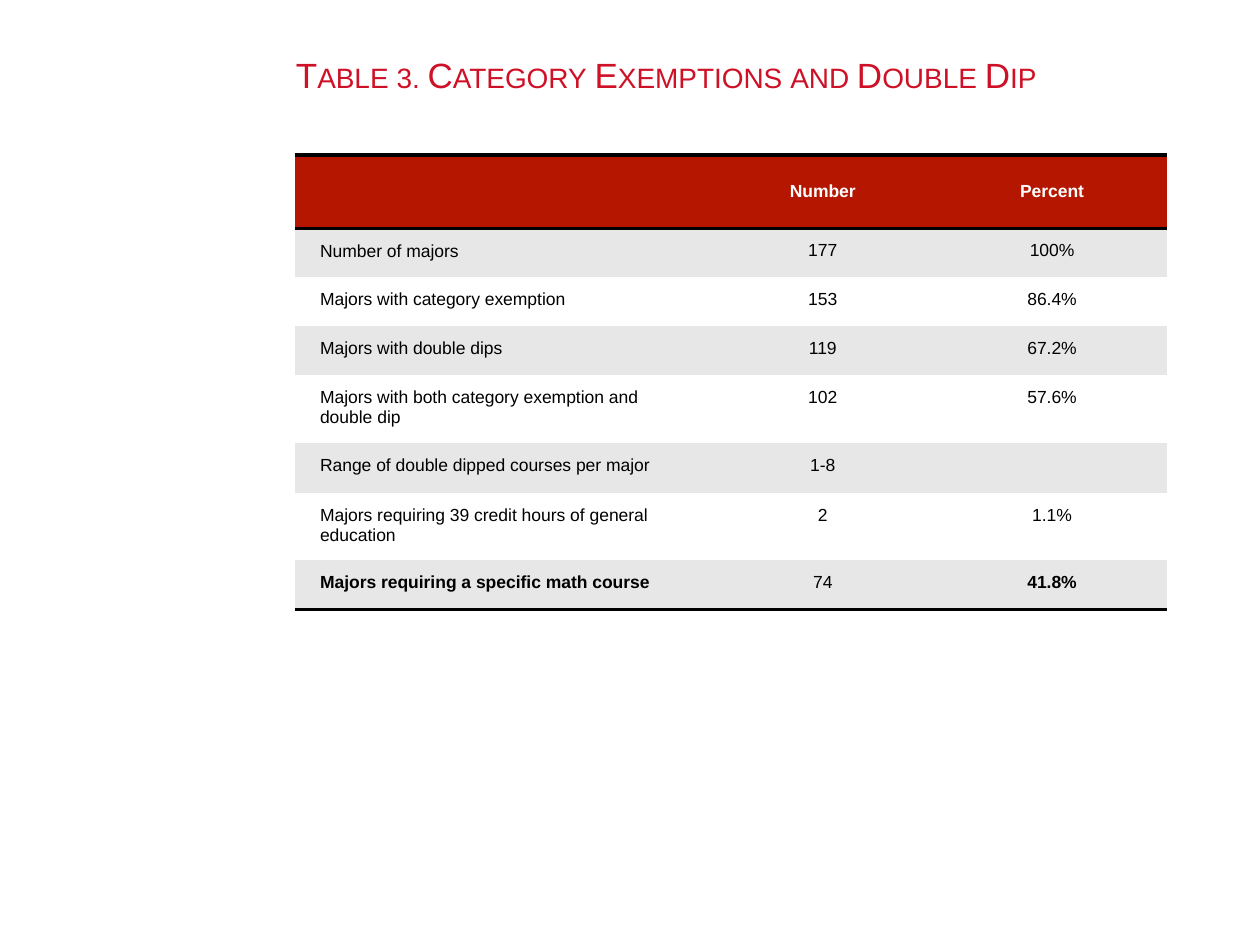
from dataclasses import dataclass

from lxml import etree
from pptx import Presentation
from pptx.dml.color import RGBColor
from pptx.enum import text
from pptx.oxml import ns
from pptx.util import Inches, Pt


@dataclass(frozen=True)
class Theme:
    font: str = "Arial"
    title_size: Pt = Pt(20)
    body_size: Pt = Pt(10)
    rule_width: Pt = Pt(2)
    title: str = "CE1126"
    header: str = "B51600"
    band: str = "E7E7E7"
    white: str = "FFFFFF"
    black: str = "000000"


@dataclass(frozen=True)
class Row:
    label: str
    number: str
    percent: str
    bold: bool = False


THEME = Theme()
NO_STYLE = "{2D5ABB26-0587-4C30-8999-92F81FD0307C}"
COLUMN_WIDTHS = (3.28, 1.82, 1.82)
HEADER_HEIGHT, ROW_HEIGHT = 0.58, 0.39

HEADER = Row("", "Number", "Percent", bold=True)
MAJORS = (
    Row("Number of majors", "177", "100%"),
    Row("Majors with category exemption", "153", "86.4%"),
    Row("Majors with double dips", "119", "67.2%"),
    Row("Majors with both category exemption and double dip", "102", "57.6%"),
    Row("Range of double dipped courses per major", "1-8", ""),
    Row("Majors requiring 39 credit hours of general education", "2", "1.1%"),
    Row("Majors requiring a specific math course", "74", "41.8%", bold=True),
)


def format_run(r, size: Pt, color: str, bold: bool = False) -> None:
    r.font.name = THEME.font
    r.font.size = size
    r.font.bold = bold
    r.font.color.rgb = RGBColor.from_string(color)


def add_title(slide, title: str) -> None:
    sp = slide.shapes.add_textbox(Inches(2.25), Inches(0.3), Inches(7.25), Inches(0.58))
    tf = sp.text_frame
    tf.word_wrap = True
    tf.vertical_anchor = text.MSO_ANCHOR.MIDDLE
    tf.text = title
    r = tf.paragraphs[0].runs[0]
    format_run(r, THEME.title_size, THEME.title)
    r.font._element.set("cap", "small")


def add_rule(cell, side: str) -> None:
    """Draw a cell border; call before filling, top ("T") before bottom ("B")."""
    ln = etree.SubElement(cell._tc.get_or_add_tcPr(), ns.qn(f"a:ln{side}"),
                          w=str(THEME.rule_width))
    fill = etree.SubElement(ln, ns.qn("a:solidFill"))
    etree.SubElement(fill, ns.qn("a:srgbClr"), val=THEME.black)


def fill_cell(cell, fill: str, rules: str) -> None:
    for side in rules:
        add_rule(cell, side)
    cell.fill.solid()
    cell.fill.fore_color.rgb = RGBColor.from_string(fill)


def write_cell(cell, content: str, color: str, bold: bool, centered: bool) -> None:
    cell.margin_left = cell.margin_right = Inches(0.2)
    cell.margin_top = cell.margin_bottom = Inches(0.1)
    cell.text_frame.text = content
    p = cell.text_frame.paragraphs[0]
    p.alignment = text.PP_ALIGN.CENTER if centered else text.PP_ALIGN.LEFT
    format_run(p.runs[0], THEME.body_size, color, bold)


def add_majors_table(slide) -> None:
    rows = (HEADER, *MAJORS)
    last = len(rows) - 1
    frame = slide.shapes.add_table(
        len(rows), len(COLUMN_WIDTHS), Inches(2.34), Inches(1.23),
        Inches(sum(COLUMN_WIDTHS)), Inches(HEADER_HEIGHT + ROW_HEIGHT * last))
    table = frame.table
    table._tbl.tblPr.find(ns.qn("a:tableStyleId")).text = NO_STYLE
    for column, width in zip(table.columns, COLUMN_WIDTHS):
        column.width = Inches(width)

    for i, row in enumerate(rows):
        is_header = i == 0
        table.rows[i].height = Inches(HEADER_HEIGHT if is_header else ROW_HEIGHT)
        fill = THEME.header if is_header else THEME.band if i % 2 else THEME.white
        color = THEME.white if is_header else THEME.black
        rules = "TB" if is_header else "B" if i == last else ""
        for j, content in enumerate((row.label, row.number, row.percent)):
            cell = table.cell(i, j)
            fill_cell(cell, fill, rules)
            if is_header:
                cell.vertical_anchor = text.MSO_ANCHOR.MIDDLE
            if content:
                # The last row emphasises its label and percentage only.
                bold = row.bold and (is_header or j != 1)
                write_cell(cell, content, color, bold, centered=j > 0)
    table.cell(1, 0).text_frame.paragraphs[0].line_spacing = 1.07


def main() -> None:
    prs = Presentation()
    prs.slide_width, prs.slide_height = Inches(10), Inches(7.5)
    slide = prs.slides.add_slide(prs.slide_layouts[6])
    add_title(slide, "Table 3. Category Exemptions and Double Dip")
    add_majors_table(slide)
    prs.save("out.pptx")


if __name__ == "__main__":
    main()
